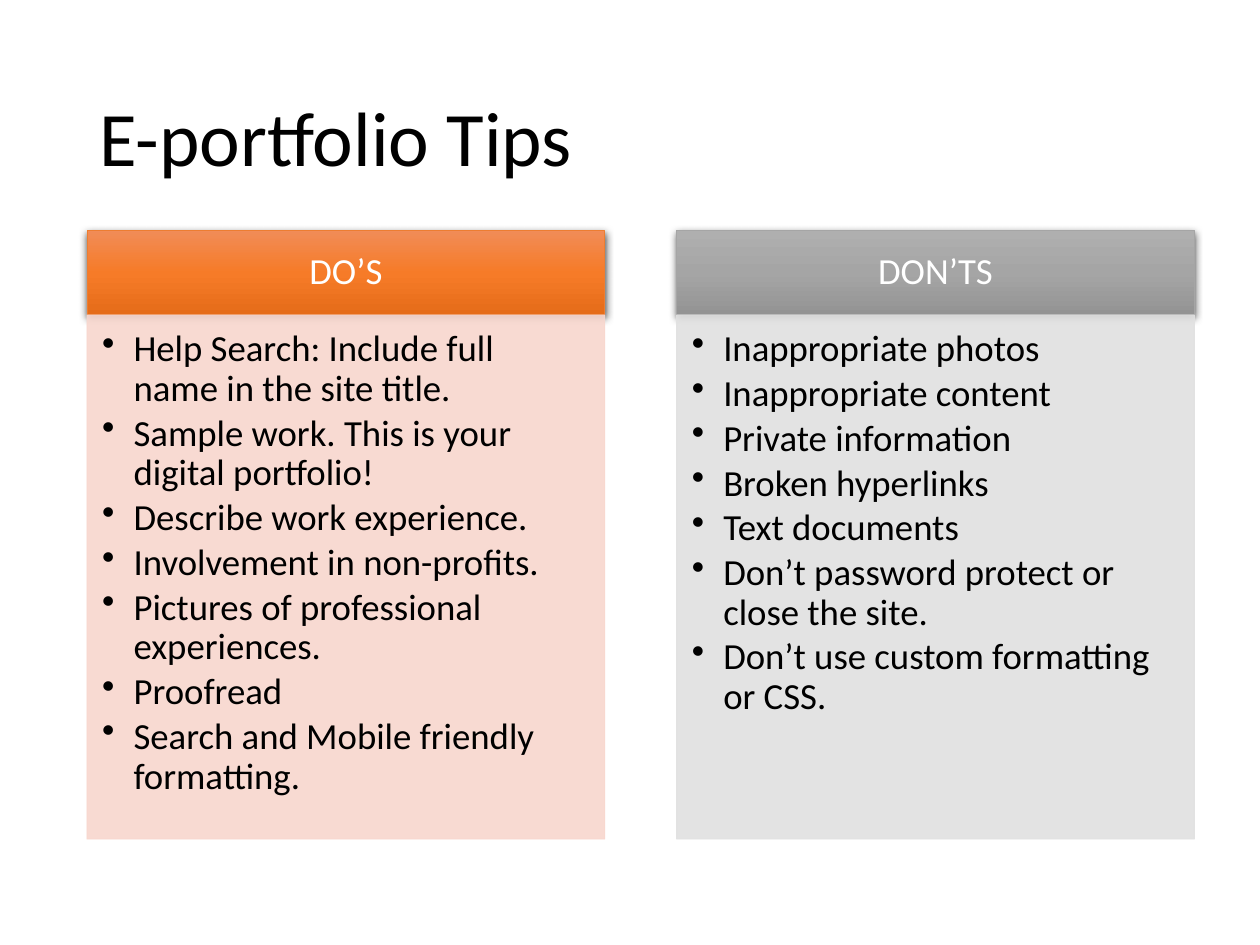
from copy import deepcopy

from lxml import etree
from pptx import Presentation
from pptx.dml.color import RGBColor
from pptx.enum.shapes import MSO_SHAPE
from pptx.enum.text import MSO_ANCHOR, PP_ALIGN
from pptx.oxml.ns import qn
from pptx.util import Inches, Pt

RECT = MSO_SHAPE.RECTANGLE
TOP, MIDDLE = MSO_ANCHOR.TOP, MSO_ANCHOR.MIDDLE
LEFT, CENTER = PP_ALIGN.LEFT, PP_ALIGN.CENTER
FONT = "Calibri"

COLUMN_LEFT, COLUMN_STEP, COLUMN_W = 0.69, 4.68, 4.11
HEAD_TOP, HEAD_H = 1.83, 0.67
BODY_TOP, BODY_H = HEAD_TOP + HEAD_H, 4.16

COLUMNS = [
    ("DO’S", ["F18C57", "F67B28", "E56C19"], "ED7D31", "F8D7CE", [
        "Help Search: Include full name in the site title.",
        "Sample work. This is your digital portfolio!",
        "Describe work experience.",
        "Involvement in non-profits.",
        "Pictures of professional experiences.",
        "Proofread",
        "Search and Mobile friendly formatting.",
    ]),
    ("DON’TS", ["AFAFAF", "A5A5A5", "939393"], "A5A5A5", "E1E1E1", [
        "Inappropriate photos",
        "Inappropriate content",
        "Private information",
        "Broken hyperlinks",
        "Text documents",
        "Don’t password protect or close the site.",
        "Don’t use custom formatting or CSS.",
    ]),
]


def color(value):
    return RGBColor.from_string(value)


def write(s, lines, size, hex_color, anchor, align, insets, bullets=False):
    tf = s.text_frame
    tf.word_wrap = True
    tf.vertical_anchor = anchor
    tf.margin_left, tf.margin_top, tf.margin_right, tf.margin_bottom = map(Inches, insets)
    for i, line in enumerate(lines):
        p = tf.paragraphs[0] if i == 0 else tf.add_paragraph()
        p.alignment = align
        p.line_spacing = 0.9
        if bullets:
            pPr = p._p.get_or_add_pPr()
            pPr.set("marL", str(Inches(0.25)))
            pPr.set("indent", str(-Inches(0.25)))
            etree.SubElement(pPr, qn("a:buChar"), char="•")
            p.space_after = Pt(2.9)
        r = p.add_run()
        r.text = line
        r.font.name = FONT
        r.font.size = Pt(size)
        r.font.color.rgb = color(hex_color)


prs = Presentation()
prs.slide_width, prs.slide_height = Inches(10), Inches(7.5)
slide = prs.slides.add_slide(prs.slide_layouts[6])

# Title
title = slide.shapes.add_textbox(Inches(0.69), Inches(0.4), Inches(8.62), Inches(1.45))
write(title, ["E-portfolio Tips"], 44, "000000", MIDDLE, LEFT, (0.1, 0.05, 0.1, 0.05))

for i, (heading, gradient, edge, tint, tips) in enumerate(COLUMNS):
    left = Inches(COLUMN_LEFT + i * COLUMN_STEP)

    # Heading bar with a three-stop gradient
    head = slide.shapes.add_shape(RECT, left, Inches(HEAD_TOP), Inches(COLUMN_W), Inches(HEAD_H))
    head.fill.gradient()
    head.fill.gradient_angle = 270
    stops = head._element.spPr.find(qn("a:gradFill")).find(qn("a:gsLst"))
    stops.insert(1, deepcopy(stops[0]))
    for stop, position, shade in zip(head.fill.gradient_stops, (0, 0.5, 1), gradient):
        stop.position = position
        stop.color.rgb = color(shade)
    head.line.color.rgb = color(edge)
    head.line.width = Pt(0.5)

    # Soft shadow below the bar
    head.shadow.inherit = False
    effects = head._element.spPr.find(qn("a:effectLst"))
    shadow = etree.SubElement(effects, qn("a:outerShdw"), blurRad=str(Pt(4.5)),
                              dist=str(Pt(1.5)), dir="5400000", algn="ctr", rotWithShape="0")
    black = etree.SubElement(shadow, qn("a:srgbClr"), val="000000")
    etree.SubElement(black, qn("a:alpha"), val="63000")
    write(head, [heading], 21, "FFFFFF", MIDDLE, CENTER, (0.16, 0.09, 0.16, 0.09))

    # Tinted panel with the tips
    body = slide.shapes.add_shape(RECT, left, Inches(BODY_TOP), Inches(COLUMN_W), Inches(BODY_H))
    body.shadow.inherit = False
    body.fill.solid()
    body.fill.fore_color.rgb = color(tint)
    body.line.color.rgb = color(tint)
    body.line.width = Pt(0.5)
    for tone in body._element.spPr.iter(qn("a:srgbClr")):
        etree.SubElement(tone, qn("a:alpha"), val="90000")
    write(body, tips, 21, "000000", TOP, LEFT, (0.12, 0.12, 0.16, 0.18), bullets=True)

prs.save("out.pptx")
